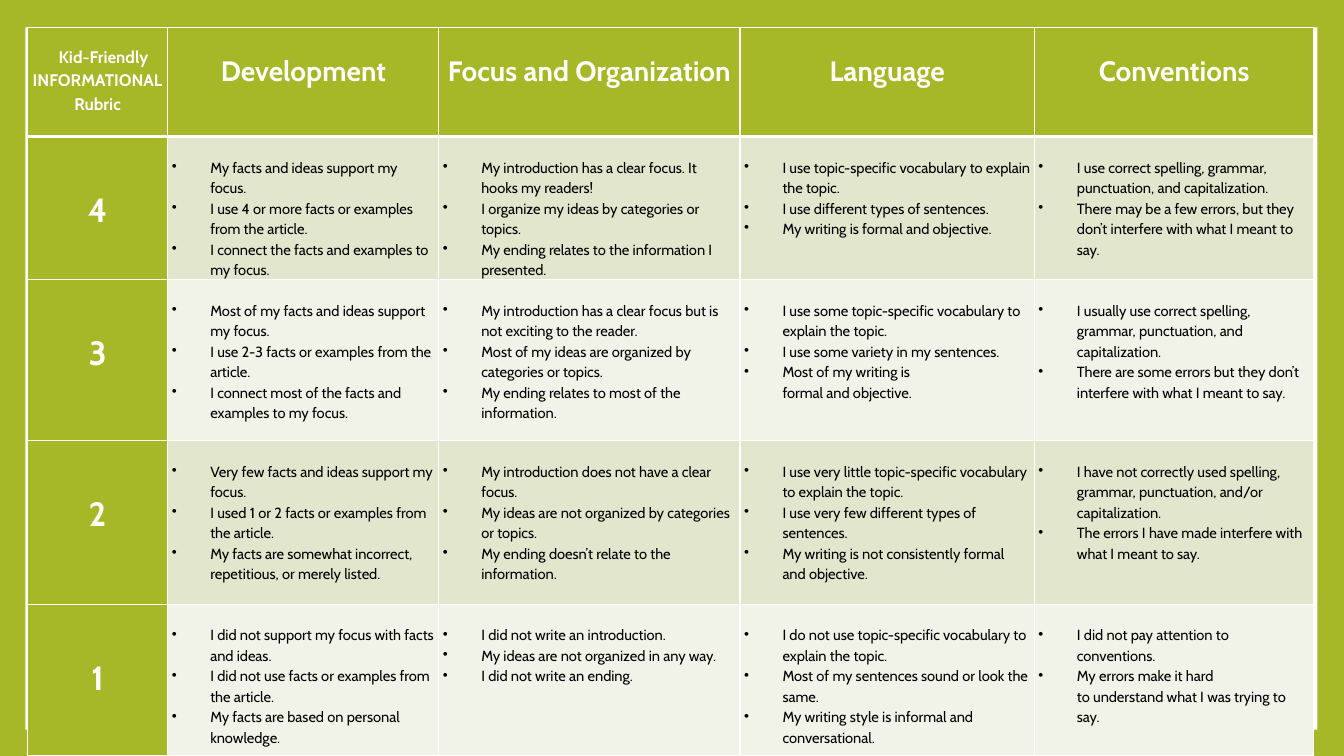
import copy
import dataclasses

import lxml.etree
import pptx
import pptx.dml.color
import pptx.enum.shapes
import pptx.enum.text
import pptx.oxml.ns
import pptx.util

Cm = pptx.util.Cm
qn = pptx.oxml.ns.qn


@dataclasses.dataclass(frozen=True)
class Theme:
    font: str = "Cabin"
    green: str = "A6B727"
    white: str = "FFFFFF"
    black: str = "000000"
    bands: tuple = ("E1E6CD", "F1F3E8")
    corner_size: float = 12
    heading_size: float = 20
    score_size: float = 24
    body_size: float = 10.5
    line_spacing: float = 1.15
    thin: float = 1
    thick: float = 3


THEME = Theme()

# Rubric content
TITLE = ["Kid-Friendly", "INFORMATIONAL", "Rubric"]
HEADINGS = ["Development", "Focus and Organization", "Language", "Conventions"]
LEVELS = {
    "4": [
        ["My facts and ideas support my focus.",
         "I use 4 or more facts or examples from the article.",
         "I connect the facts and examples to my focus."],
        ["My introduction has a clear focus. It hooks my readers!",
         "I organize my ideas by categories or topics.",
         "My ending relates to the information I presented."],
        ["I use topic-specific vocabulary to explain the topic.",
         "I use different types of sentences.",
         "My writing is formal and objective."],
        ["I use correct spelling, grammar, punctuation, and capitalization.",
         "There may be a few errors, but they don’t interfere with what I meant to say."],
    ],
    "3": [
        ["Most of my facts and ideas support my focus.",
         "I use 2-3 facts or examples from the article.",
         "I connect most of the facts and examples to my focus."],
        ["My introduction has a clear focus but is not exciting to the reader.",
         "Most of my ideas are organized by categories or topics.",
         "My ending relates to most of the information."],
        ["I use some topic-specific vocabulary to explain the topic.",
         "I use some variety in my sentences.",
         "Most of my writing is\nformal and objective."],
        ["I usually use correct spelling, grammar, punctuation, and capitalization.",
         "There are some errors but they don’t interfere with what I meant to say."],
    ],
    "2": [
        ["Very few facts and ideas support my focus.",
         "I used 1 or 2 facts or examples from the article.",
         "My facts are somewhat incorrect, repetitious, or merely listed."],
        ["My introduction does not have a clear focus.",
         "My ideas are not organized by categories or topics.",
         "My ending doesn’t relate to the information."],
        ["I use very little topic-specific vocabulary to explain the topic.",
         "I use very few different types of sentences.",
         "My writing is not consistently formal and objective."],
        ["I have not correctly used spelling, grammar, punctuation, and/or capitalization.",
         "The errors I have made interfere with what I meant to say."],
    ],
    "1": [
        ["I did not support my focus with facts and ideas.",
         "I did not use facts or examples from the article.",
         "My facts are based on personal knowledge."],
        ["I did not write an introduction.",
         "My ideas are not organized in any way.",
         "I did not write an ending."],
        ["I do not use topic-specific vocabulary to explain the topic.",
         "Most of my sentences sound or look the same.",
         "My writing style is informal and conversational."],
        ["I did not pay attention to conventions.",
         "My errors make it hard\nto understand what I was trying to say."],
    ],
}
COLUMN_WIDTHS = [3.54, 6.83, 7.59, 7.42, 7.04]
ROW_HEIGHTS = [2.75, 3.61, 4.06, 4.12, 3.82]


def rgb(color):
    return pptx.dml.color.RGBColor.from_string(color)


def apply(target, values):
    for name, value in values.items():
        setattr(target, name, value)


class RubricBuilder:
    def __init__(self, slide, theme):
        self.slide = slide
        self.theme = theme

    def background(self, color):
        fill = self.slide.background.fill
        fill.solid()
        fill.fore_color.rgb = rgb(color)

    def panel(self, left, top, width, height, color):
        shape = self.slide.shapes.add_shape(
            pptx.enum.shapes.MSO_SHAPE.RECTANGLE, Cm(left), Cm(top), Cm(width), Cm(height))
        shape.shadow.inherit = False
        shape.fill.solid()
        shape.fill.fore_color.rgb = rgb(color)
        shape.line.fill.background()

    def table(self, left, top, widths, heights):
        table = self.slide.shapes.add_table(
            len(heights), len(widths), Cm(left), Cm(top),
            Cm(sum(widths)), Cm(sum(heights))).table
        apply(table, {"first_row": False, "horz_banding": False})
        for column, width in zip(table.columns, widths):
            column.width = Cm(width)
        for row, height in zip(table.rows, heights):
            row.height = Cm(height)
        return table

    def borders(self, cell, **widths):
        properties = cell._tc.get_or_add_tcPr()
        for side in "LRTB":
            width = pptx.util.Pt(widths.get(side, self.theme.thin))
            line = lxml.etree.SubElement(properties, qn(f"a:ln{side}"), w=str(width))
            fill = lxml.etree.SubElement(line, qn("a:solidFill"))
            lxml.etree.SubElement(fill, qn("a:srgbClr"), val=self.theme.white)

    def cell(self, cell, lines, fill, size, top, label=True, **border_widths):
        self.borders(cell, **border_widths)
        cell.fill.solid()
        cell.fill.fore_color.rgb = rgb(fill)
        apply(cell, {"margin_left": Cm(0.1), "margin_right": Cm(0.1),
                     "margin_top": Cm(top), "margin_bottom": 0})
        for index, text in enumerate(lines):
            frame = cell.text_frame
            paragraph = frame.add_paragraph() if index else frame.paragraphs[0]
            paragraph.text = text
            paragraph.line_spacing = self.theme.line_spacing
            for run in paragraph.runs:
                apply(run.font, {"name": self.theme.font, "bold": label,
                                 "size": pptx.util.Pt(size)})
                run.font.color.rgb = rgb(self.theme.white if label else self.theme.black)
            # Line breaks take the size of the text around them
            for line_break in paragraph._p.findall(qn("a:br")):
                line_break.append(copy.deepcopy(paragraph.runs[0]._r.rPr))
            if label:
                paragraph.alignment = pptx.enum.text.PP_ALIGN.CENTER
            else:
                self.bullet(paragraph, 0.97)

    def bullet(self, paragraph, indent):
        properties = paragraph._p.get_or_add_pPr()
        self.indent(paragraph, indent, -indent)
        lxml.etree.SubElement(properties, qn("a:buChar"), char="•")

    def indent(self, paragraph, left, first=0):
        properties = paragraph._p.get_or_add_pPr()
        properties.set("marL", str(Cm(left)))
        properties.set("indent", str(Cm(first)))


def main():
    presentation = pptx.Presentation()
    apply(presentation, {"slide_width": Cm(33.87), "slide_height": Cm(19.05)})
    slide = presentation.slides.add_slide(presentation.slide_layouts[6])
    builder = RubricBuilder(slide, THEME)

    # Backdrop
    builder.background(THEME.green)
    builder.panel(0.64, 0.69, 32.56, 17.7, THEME.white)

    # Header row
    table = builder.table(0.69, 0.69, COLUMN_WIDTHS, ROW_HEIGHTS)
    corner = table.cell(0, 0)
    builder.cell(corner, TITLE, THEME.green, THEME.corner_size, 0.42, B=THEME.thick)
    builder.indent(corner.text_frame.paragraphs[0], 0.3)
    for column, heading in enumerate(HEADINGS, 1):
        builder.cell(table.cell(0, column), [heading], THEME.green,
                     THEME.heading_size, 0.56, B=THEME.thick)

    # Score rows
    for row, (score, criteria) in enumerate(LEVELS.items(), 1):
        top_border = THEME.thick if row == 1 else THEME.thin
        builder.cell(table.cell(row, 0), [score], THEME.green,
                     THEME.score_size, 1.19, T=top_border)
        band = THEME.bands[(row - 1) % 2]
        for column, lines in enumerate(criteria, 1):
            builder.cell(table.cell(row, column), lines, band, THEME.body_size,
                         0.5, label=False, T=top_border)

    presentation.save("out.pptx")


if __name__ == "__main__":
    main()
